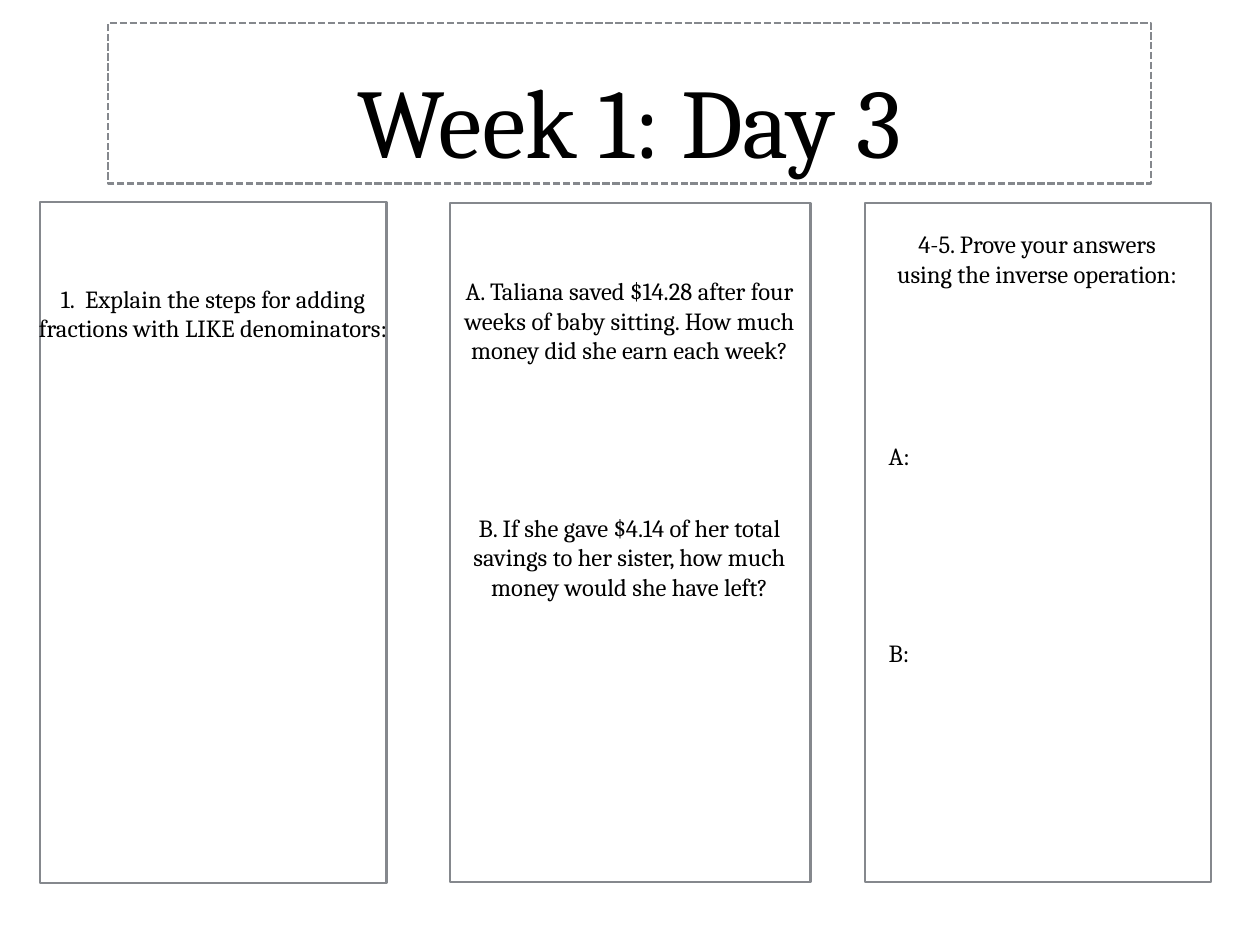
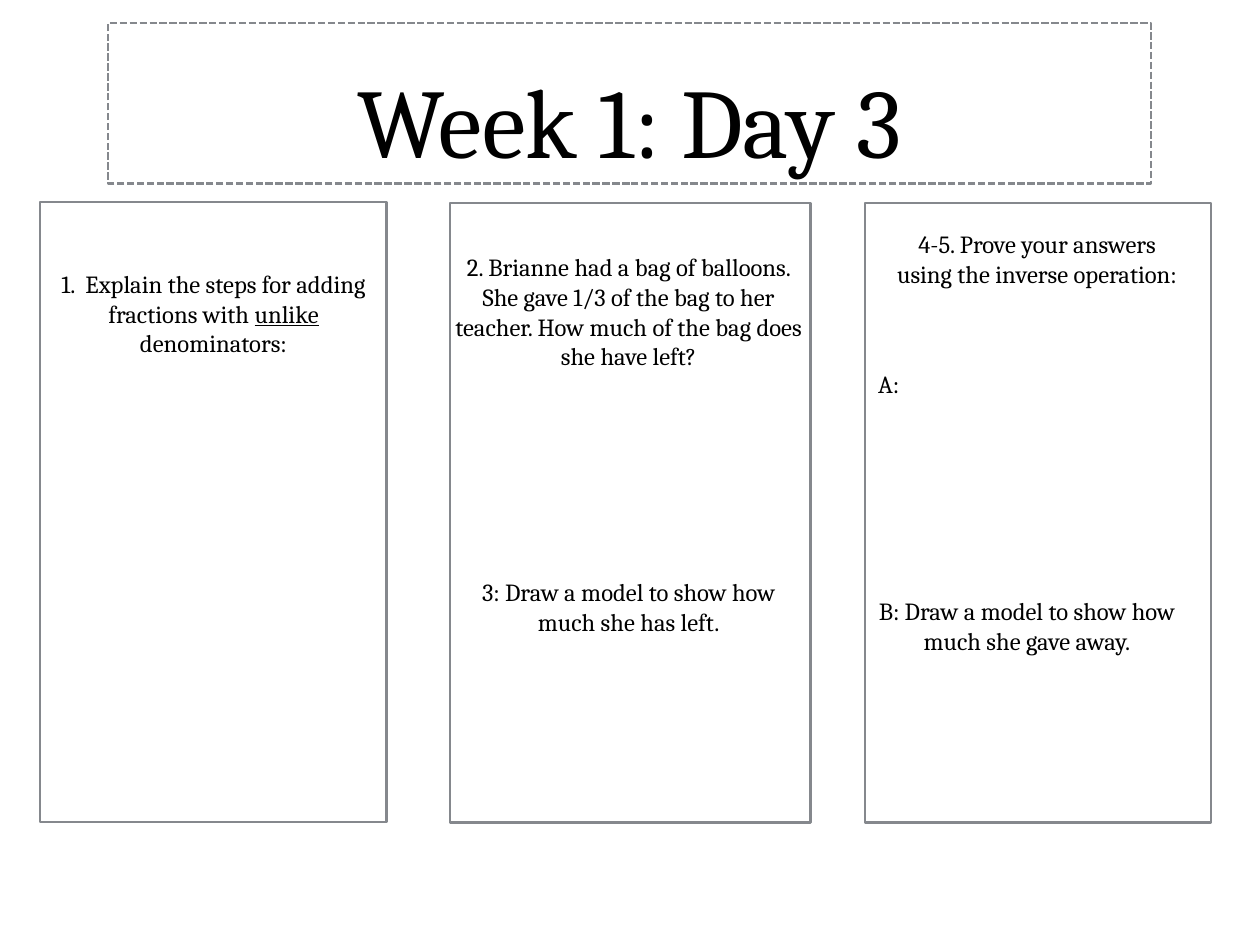
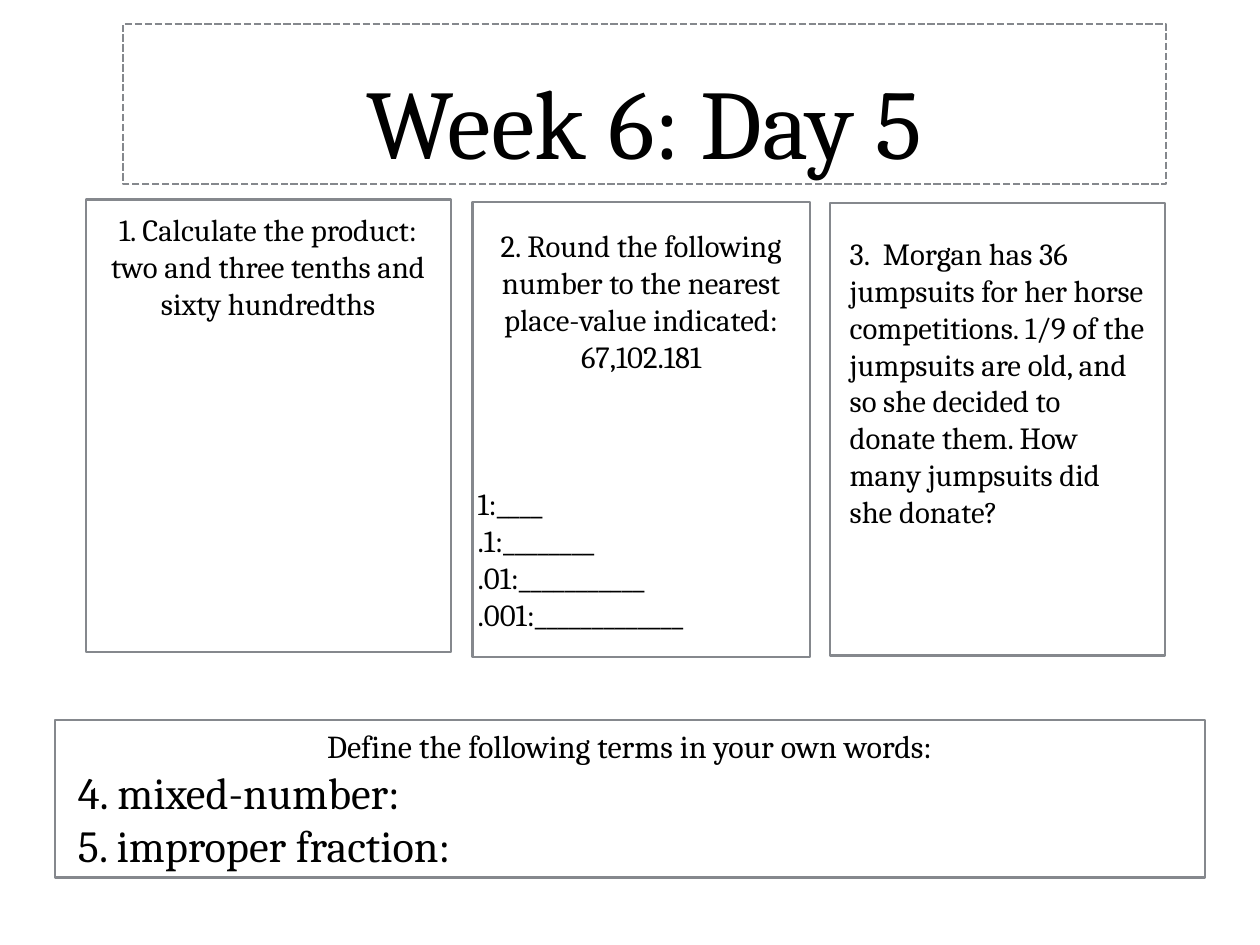
from pptx import Presentation
from pptx.dml.color import RGBColor
from pptx.enum.dml import MSO_LINE
from pptx.enum.shapes import MSO_SHAPE
from pptx.enum.text import MSO_ANCHOR, MSO_AUTO_SIZE, PP_ALIGN
from pptx.util import Inches, Pt

RECTANGLE = MSO_SHAPE.RECTANGLE
DASHED = MSO_LINE.SQUARE_DOT
TOP, MIDDLE, BOTTOM = MSO_ANCHOR.TOP, MSO_ANCHOR.MIDDLE, MSO_ANCHOR.BOTTOM
LEFT, CENTER = PP_ALIGN.LEFT, PP_ALIGN.CENTER
NO_AUTOFIT = MSO_AUTO_SIZE.NONE
COLORS = {"frame": "85888D", "text": "000000"}
FONT = "Cambria"
INSET = 0.06
LINE_FACTOR = 1.2
PROOF = "4-5. Prove your answers\vusing the inverse operation:"


def color(name):
    """Return the named palette colour."""
    return RGBColor.from_string(COLORS[name])


def outline(shape):
    """Give a shape the shared grey outline."""
    shape.line.color.rgb = color("frame")
    shape.line.width = Pt(2)


def prepare_frame(shape, anchor):
    """Set wrapping, insets and anchor, and return the text frame."""
    frame = shape.text_frame
    frame.word_wrap = True
    frame.auto_size = NO_AUTOFIT
    frame.vertical_anchor = anchor
    frame.margin_left = frame.margin_right = Inches(INSET)
    frame.margin_top = frame.margin_bottom = Inches(INSET)
    return frame


def write(frame, text, size=20, align=CENTER, gap_lines=0, indent=0, underline=None):
    """Write one paragraph, with an optional gap above and an underlined word."""
    first = frame.paragraphs[0]
    paragraph = frame.add_paragraph() if first.runs else first
    paragraph.alignment = align
    paragraph.space_before = Pt(gap_lines * size * LINE_FACTOR)
    if indent:
        paragraph._p.get_or_add_pPr().set("marL", str(Inches(indent)))
    if underline:
        for part in text.partition(underline):
            run = paragraph.add_run()
            run.text = part
            run.font.underline = part == underline
    else:
        paragraph.text = text
    for run in paragraph.runs:
        run.font.name = FONT
        run.font.size = Pt(size)
        run.font.color.rgb = color("text")


def add_titled_slide(presentation, title_text, left=1.22, top=0.26):
    """Add a slide with a dashed title frame."""
    slide = presentation.slides.add_slide(presentation.slide_layouts[0])
    subtitle = slide.placeholders[1]
    subtitle.element.getparent().remove(subtitle.element)
    title = slide.shapes.title
    title.left, title.top = Inches(left), Inches(top)
    title.width, title.height = Inches(11.77), Inches(1.81)
    outline(title)
    title.line.dash_style = DASHED
    write(prepare_frame(title, BOTTOM), title_text, size=80)
    return slide


def add_panel(slide, left, top, width, height):
    """Add an outlined panel and return its text frame."""
    panel = slide.shapes.add_shape(
        RECTANGLE, Inches(left), Inches(top), Inches(width), Inches(height))
    panel.shadow.inherit = False
    panel.fill.background()
    outline(panel)
    return prepare_frame(panel, MIDDLE)


def add_text(slide, left, top, width, height, text, **text_format):
    """Add a text box with a first paragraph and return its text frame."""
    box = slide.shapes.add_textbox(
        Inches(left), Inches(top), Inches(width), Inches(height))
    frame = prepare_frame(box, TOP)
    write(frame, text, **text_format)
    return frame


def add_worksheet(presentation, heights):
    """Add a Week 1 slide with three panels and the proof heading."""
    slide = add_titled_slide(presentation, "Week 1: Day 3")
    columns = [(0.45, 2.28, 3.91), (5.08, 2.29, 4.07), (9.76, 2.29, 3.91)]
    for (left, top, width), height in zip(columns, heights):
        add_panel(slide, left, top, width, height)
    add_text(slide, 9.66, 2.53, 4.09, 0.78, PROOF)
    return slide


def build_like_fractions(presentation):
    """Build the slide on like denominators and savings."""
    slide = add_worksheet(presentation, (7.69, 7.67, 7.67))
    add_text(slide, 0.36, 3.14, 4.09, 0.78,
             "1.  Explain the steps for adding fractions with LIKE denominators:")
    savings = add_text(slide, 5.06, 3.06, 4.09, 3.78,
                       "A. Taliana saved $14.28 after four weeks of baby sitting. "
                       "How much money did she earn each week?")
    write(savings, "B. If she gave $4.14 of her total savings to her sister, "
                   "how much money would she have left?", gap_lines=5)
    for label, top in (("A:", 4.92), ("B:", 7.14)):
        add_text(slide, 9.97, top, 1, 0.44, label, align=LEFT)


def build_unlike_fractions(presentation):
    """Build the slide on unlike denominators and balloons."""
    slide = add_worksheet(presentation, (7, 7, 7))
    add_text(slide, 0.52, 2.98, 3.78, 1.12,
             "1.  Explain the steps for adding fractions with unlike denominators:",
             underline="unlike")
    balloons = add_text(slide, 5.05, 2.79, 4.09, 4.44,
                        "2. Brianne had a bag of balloons. She gave 1/3 of the bag "
                        "to her teacher. How much of the bag does she have left?")
    write(balloons, "3: Draw a model to show how much she has left.", gap_lines=7)
    add_text(slide, 9.85, 4.1, 1, 0.44, "A:", align=LEFT)
    add_text(slide, 9.82, 6.67, 3.54, 0.78,
             "B: Draw a model to show how much she gave away.")


def build_mixed_review(presentation):
    """Build the Week 6 slide with three problems and two definitions."""
    slide = add_titled_slide(presentation, "Week 6: Day 5", left=1.39, top=0.27)
    definitions = add_panel(slide, 0.62, 8.13, 12.98, 1.78)
    write(definitions, "Define the following terms in your own words:", size=26)
    for term in ("4. mixed-number:", "5. improper fraction:"):
        write(definitions, term, size=36, align=LEFT, indent=0.2)

    add_panel(slide, 0.97, 2.25, 4.12, 5.11)
    product = add_text(slide, 0.94, 2.32, 4.17, 1.36,
                       "1. Calculate the product:", size=25)
    write(product, "two and three tenths and sixty hundredths", size=25)

    rounding = add_panel(slide, 5.33, 2.28, 3.81, 5.14)
    write(rounding, "2. Round the following number to the nearest "
                    "place-value indicated:", size=25)
    write(rounding, "67,102.181", size=25)
    blanks = ("1:____", ".1:________", ".01:___________", ".001:_____________")
    for index, blank in enumerate(blanks):
        write(rounding, blank, size=25, align=LEFT, gap_lines=0 if index else 3)

    add_panel(slide, 9.37, 2.29, 3.78, 5.11)
    add_text(slide, 9.53, 2.59, 3.45, 3.46,
             "3.  Morgan has 36 jumpsuits for her horse competitions. 1/9 of the "
             "jumpsuits are old, and so she decided to donate them. "
             "How many jumpsuits did she donate?", size=25, align=LEFT)


def main():
    """Build and save the presentation."""
    presentation = Presentation()
    presentation.slide_width = Inches(14.22)
    presentation.slide_height = Inches(10.67)
    build_like_fractions(presentation)
    build_unlike_fractions(presentation)
    build_mixed_review(presentation)
    presentation.save("out.pptx")


if __name__ == "__main__":
    main()
